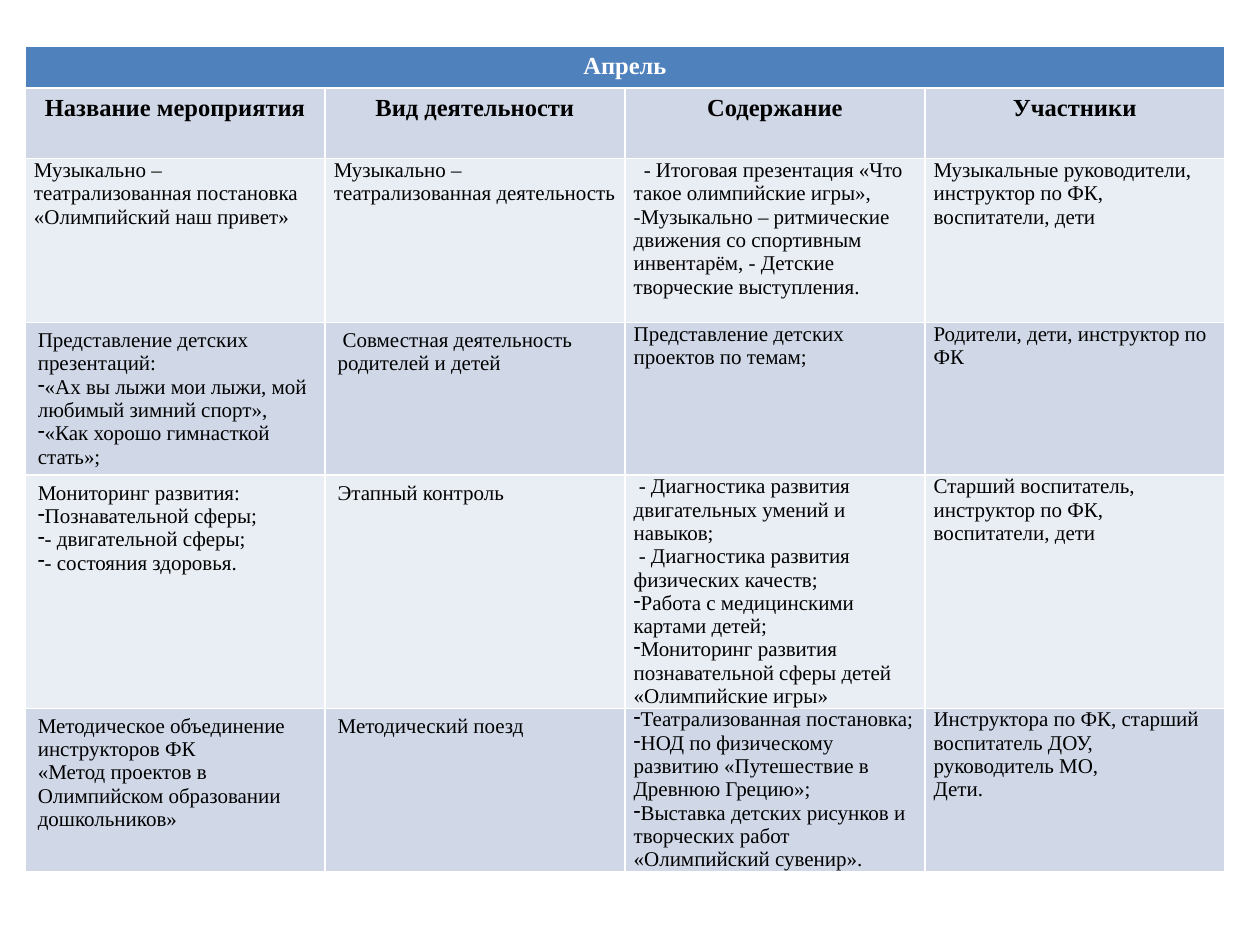
"""Build the April event plan slide."""
from lxml import etree
from pptx import Presentation
from pptx.dml.color import RGBColor
from pptx.enum.text import PP_ALIGN
from pptx.oxml.ns import qn
from pptx.util import Inches, Pt

CENTER = PP_ALIGN.CENTER
LEFT = PP_ALIGN.LEFT
FONT = "Times New Roman"
COLORS = {"title": "4F81BD", "dark": "D0D8E8", "light": "E9EDF4",
          "white": "FFFFFF", "black": "000000"}
COLUMN_WIDTH = 2.38
ROW_HEIGHTS = [0.33, 0.56, 1.3, 1.02, 1.02, 1.02]
SPACE_INDENT = 0.04
BULLET = "•"
INDENT = ">"

TITLE = "Апрель"
HEADINGS = ["Название мероприятия", "Вид деятельности", "Содержание", "Участники"]
EVENTS = [
    [
        ["Музыкально – театрализованная постановка", "«Олимпийский наш привет»"],
        ["Музыкально – театрализованная деятельность"],
        [">>- Итоговая презентация «Что такое олимпийские игры»,",
         "-Музыкально – ритмические движения со спортивным инвентарём, "
         "- Детские творческие выступления."],
        ["Музыкальные руководители, инструктор по ФК, воспитатели, дети"],
    ],
    [
        ["Представление детских презентаций:",
         "•«Ах вы лыжи мои лыжи, мой любимый зимний спорт»,",
         "•«Как хорошо гимнасткой стать»;"],
        [">Совместная деятельность родителей и детей"],
        ["Представление детских проектов по темам;"],
        ["Родители, дети, инструктор по ФК"],
    ],
    [
        ["Мониторинг развития:", "•Познавательной сферы;",
         "•- двигательной сферы;", "•- состояния здоровья."],
        ["Этапный контроль"],
        [">- Диагностика развития двигательных умений и навыков;",
         ">- Диагностика развития физических качеств;",
         "•Работа с медицинскими картами детей;",
         "•Мониторинг развития познавательной сферы детей «Олимпийские игры»"],
        ["Старший воспитатель, инструктор по ФК, воспитатели, дети"],
    ],
    [
        ["Методическое объединение инструкторов ФК",
         "«Метод проектов в Олимпийском образовании дошкольников»"],
        ["Методический поезд"],
        ["•Театрализованная постановка;",
         "•НОД по физическому развитию «Путешествие в Древнюю Грецию»;",
         "•Выставка детских рисунков и творческих работ «Олимпийский сувенир»."],
        ["Инструктора по ФК, старший воспитатель ДОУ, руководитель МО,", "Дети."],
    ],
]


def write_paragraph(paragraph, line, size, bold, color, alignment):
    """Write one line, turning its leading marks into an indent or a dash bullet."""
    text = line.lstrip(INDENT + BULLET)
    marks = line[:len(line) - len(text)]
    paragraph.text = text
    paragraph.alignment = alignment
    properties = paragraph._p.get_or_add_pPr()
    if INDENT in marks:
        properties.set("indent", str(Inches(SPACE_INDENT * len(marks))))
    if BULLET in marks:
        etree.SubElement(properties, qn("a:buChar"), char="-")
    font = paragraph.font
    font.name, font.size, font.bold = FONT, Pt(size), bold
    font.color.rgb = RGBColor.from_string(COLORS[color])


def fill_cell(cell, lines, fill, size=12, bold=False, color="black", alignment=LEFT):
    """Fill a cell with a colour and its lines of text."""
    cell.fill.solid()
    cell.fill.fore_color.rgb = RGBColor.from_string(COLORS[fill])
    frame = cell.text_frame
    for index, line in enumerate(lines):
        paragraph = frame.add_paragraph() if index else frame.paragraphs[0]
        write_paragraph(paragraph, line, size, bold, color, alignment)


def tighten_margins(cell):
    """Give a cell narrow side margins and no margin above or below."""
    cell.margin_left = cell.margin_right = Inches(0.07)
    cell.margin_top = cell.margin_bottom = 0


def add_plan_table(slide):
    """Add the empty plan table with its column and row sizes."""
    columns = len(HEADINGS)
    shape = slide.shapes.add_table(
        len(ROW_HEIGHTS), columns, Inches(0.2), Inches(0.37),
        Inches(COLUMN_WIDTH * columns), Inches(sum(ROW_HEIGHTS)))
    table = shape.table
    for row, height in zip(table.rows, ROW_HEIGHTS):
        row.height = Inches(height)
    return table


def main():
    """Build and save the slide."""
    presentation = Presentation()
    presentation.slide_width, presentation.slide_height = Inches(10), Inches(7.5)
    slide = presentation.slides.add_slide(presentation.slide_layouts[6])
    table = add_plan_table(slide)
    table.cell(0, 0).merge(table.cell(0, len(HEADINGS) - 1))
    fill_cell(table.cell(0, 0), [TITLE], "title", 14, True, "white", CENTER)
    for column, heading in enumerate(HEADINGS):
        fill_cell(table.cell(1, column), [heading], "dark", 14, True, alignment=CENTER)
    for row, event in enumerate(EVENTS, start=2):
        for column, lines in enumerate(event):
            cell = table.cell(row, column)
            fill_cell(cell, lines, "dark" if row % 2 else "light")
            if row == 2 or column >= 2:
                tighten_margins(cell)
    presentation.save("out.pptx")


if __name__ == "__main__":
    main()
